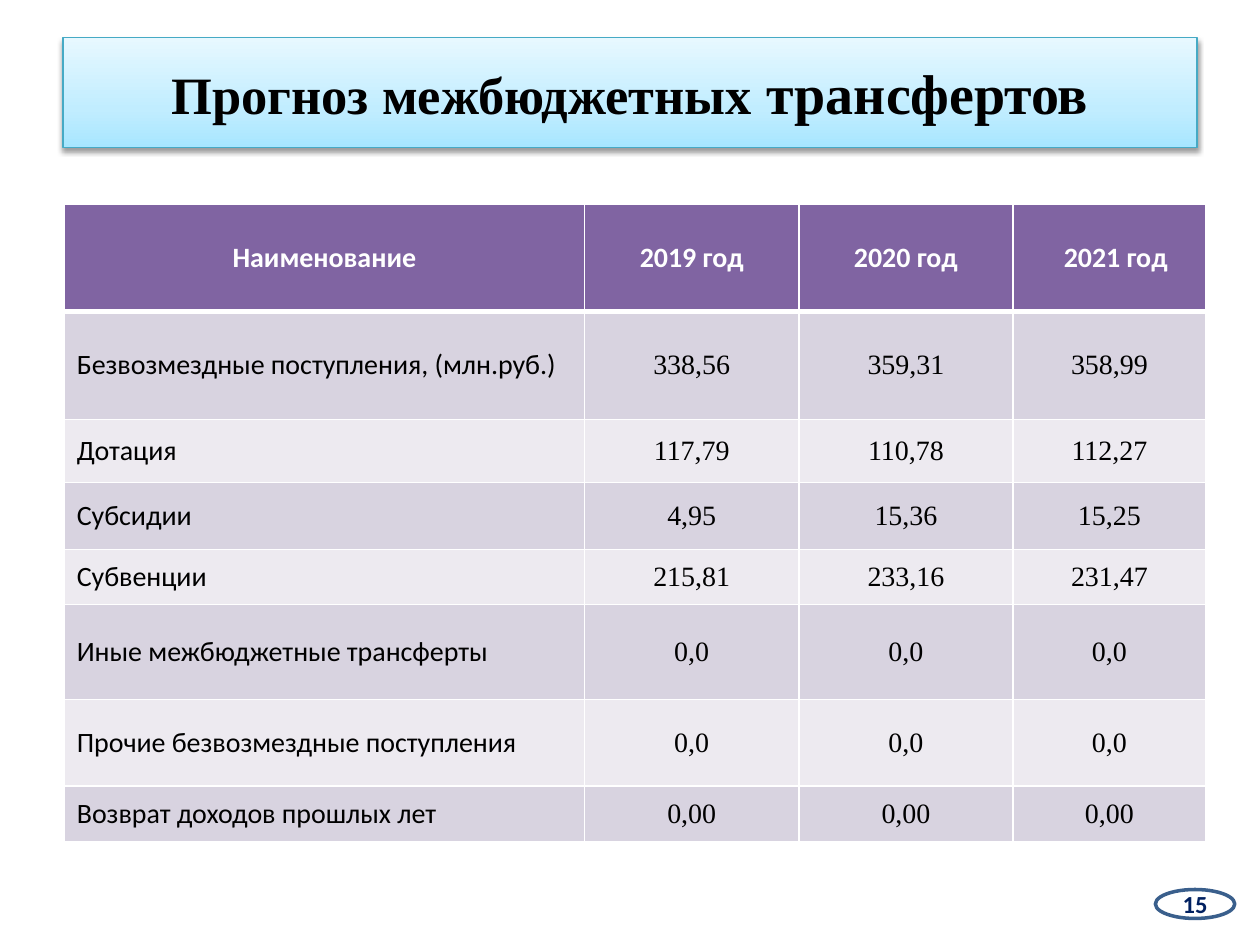
from lxml.etree import SubElement
from pptx import Presentation
from pptx.dml.color import RGBColor
from pptx.enum.shapes import MSO_SHAPE
from pptx.enum.text import MSO_ANCHOR, PP_ALIGN
from pptx.oxml.ns import qn
from pptx.util import Inches, Pt

COLORS = {
    "text": "000000",
    "white": "FFFFFF",
    "header": "8064A2",
    "band_dark": "D8D3E0",
    "band_light": "EDEAF0",
    "title_line": "46AAC5",
    "badge_line": "3A5F8C",
    "badge_text": "002060",
}
TITLE_STOPS = [(0, "A7E6FF"), (35, "C1EDFF"), (100, "E7F8FF")]
SANS, SERIF = "Calibri", "Times New Roman"

COLUMN_WIDTHS = [4.13, 1.7, 1.7, 1.53]
ROW_HEIGHTS = [0.85, 0.86, 0.5, 0.53, 0.44, 0.75, 0.69, 0.44]
TRANSFERS = [
    ["Наименование", "2019 год", "2020 год", "2021 год"],
    ["Безвозмездные поступления, (млн.руб.)", "338,56", "359,31", "358,99"],
    ["Дотация", "117,79", "110,78", "112,27"],
    ["Субсидии", "4,95", "15,36", "15,25"],
    ["Субвенции", "215,81", "233,16", "231,47"],
    ["Иные межбюджетные трансферты", "0,0", "0,0", "0,0"],
    ["Прочие безвозмездные поступления", "0,0", "0,0", "0,0"],
    ["Возврат доходов прошлых лет", "0,00", "0,00", "0,00"],
]


def rgb(name):
    """Return the palette colour with this name."""
    return RGBColor.from_string(COLORS[name])


def add_run(paragraph, text, size, font, color, bold=False):
    """Append one formatted run to a paragraph."""
    run = paragraph.add_run()
    run.text = text
    run.font.size = Pt(size)
    run.font.name = font
    run.font.bold = bold
    run.font.color.rgb = rgb(color)


def set_gradient(shape, stops):
    """Fill a shape with a gradient that runs from bottom to top."""
    shape.fill.gradient()
    shape.fill.gradient_angle = 90
    stop_list = next(shape._element.spPr.iter(qn("a:gsLst")))
    stop_list.clear()
    for percent, color in stops:
        stop = SubElement(stop_list, qn("a:gs"), pos=str(percent * 1000))
        SubElement(stop, qn("a:srgbClr"), val=color)


def set_shadow(shape, blur, distance, opacity):
    """Give a shape a soft shadow that falls straight down."""
    shape.shadow.inherit = False
    effects = shape._element.spPr.find(qn("a:effectLst"))
    shadow = SubElement(effects, qn("a:outerShdw"), blurRad=str(Pt(blur)),
                        dist=str(Pt(distance)), dir="5400000", rotWithShape="0")
    color = SubElement(shadow, qn("a:srgbClr"), val=COLORS["text"])
    SubElement(color, qn("a:alpha"), val=str(opacity * 1000))


def fill_title(title):
    """Place and format the title banner."""
    title.left, title.top = Inches(0.5), Inches(0.3)
    title.width, title.height = Inches(9), Inches(0.87)
    set_gradient(title, TITLE_STOPS)
    title.line.color.rgb = rgb("title_line")
    title.line.width = Pt(0.75)
    set_shadow(title, 3.1, 1.6, 38)
    title.text_frame.vertical_anchor = MSO_ANCHOR.MIDDLE
    paragraph = title.text_frame.paragraphs[0]
    paragraph.alignment = PP_ALIGN.CENTER
    add_run(paragraph, "Прогноз межбюджетных", 30, SERIF, "text", True)
    add_run(paragraph, " трансфертов", 32, SERIF, "text", True)


def set_borders(cell, bottom_width):
    """Draw white borders round a cell."""
    widths = {"a:lnL": 1, "a:lnR": 1, "a:lnT": 1, "a:lnB": bottom_width}
    properties = cell._tc.get_or_add_tcPr()
    for side, width in widths.items():
        border = SubElement(properties, qn(side), w=str(Pt(width)))
        fill = SubElement(border, qn("a:solidFill"))
        SubElement(fill, qn("a:srgbClr"), val=COLORS["white"])


def fill_cell(cell, text, row, column):
    """Write and format one table cell according to its place."""
    is_header = row == 0
    is_name = column == 0
    set_borders(cell, 3 if is_header else 1)
    band = "band_dark" if row % 2 else "band_light"
    cell.fill.solid()
    cell.fill.fore_color.rgb = rgb("header" if is_header else band)
    cell.vertical_anchor = MSO_ANCHOR.MIDDLE
    paragraph = cell.text_frame.paragraphs[0]
    paragraph.alignment = PP_ALIGN.CENTER if is_header or not is_name else PP_ALIGN.LEFT
    font = SANS if is_header or is_name else SERIF
    add_run(paragraph, text, 16, font, "white" if is_header else "text", is_header)


def add_transfer_table(slide):
    """Add the table of transfers by year."""
    table = slide.shapes.add_table(
        len(ROW_HEIGHTS), len(COLUMN_WIDTHS), Inches(0.51), Inches(1.62),
        Inches(sum(COLUMN_WIDTHS)), Inches(sum(ROW_HEIGHTS))).table
    for column, width in zip(table.columns, COLUMN_WIDTHS):
        column.width = Inches(width)
    for row, height in zip(table.rows, ROW_HEIGHTS):
        row.height = Inches(height)
    for r, texts in enumerate(TRANSFERS):
        for c, text in enumerate(texts):
            fill_cell(table.cell(r, c), text, r, c)
    table.cell(0, len(COLUMN_WIDTHS) - 1).margin_left = Inches(0.2)


def add_page_badge(slide, number):
    """Add the oval with the page number."""
    badge = slide.shapes.add_shape(MSO_SHAPE.OVAL, Inches(9.17), Inches(7.06),
                                   Inches(0.63), Inches(0.23))
    badge.shadow.inherit = False
    badge.fill.solid()
    badge.fill.fore_color.rgb = rgb("white")
    badge.line.color.rgb = rgb("badge_line")
    badge.line.width = Pt(2)
    frame = badge.text_frame
    frame.margin_left = frame.margin_right = frame.margin_top = frame.margin_bottom = 0
    frame.vertical_anchor = MSO_ANCHOR.MIDDLE
    paragraph = frame.paragraphs[0]
    paragraph.alignment = PP_ALIGN.CENTER
    add_run(paragraph, number, 14, SANS, "badge_text", True)


def main():
    """Build the slide and save it."""
    presentation = Presentation()
    presentation.slide_width, presentation.slide_height = Inches(10), Inches(7.5)
    slide = presentation.slides.add_slide(presentation.slide_layouts[5])
    fill_title(slide.shapes.title)
    add_transfer_table(slide)
    add_page_badge(slide, "15")
    presentation.save("out.pptx")


if __name__ == "__main__":
    main()
